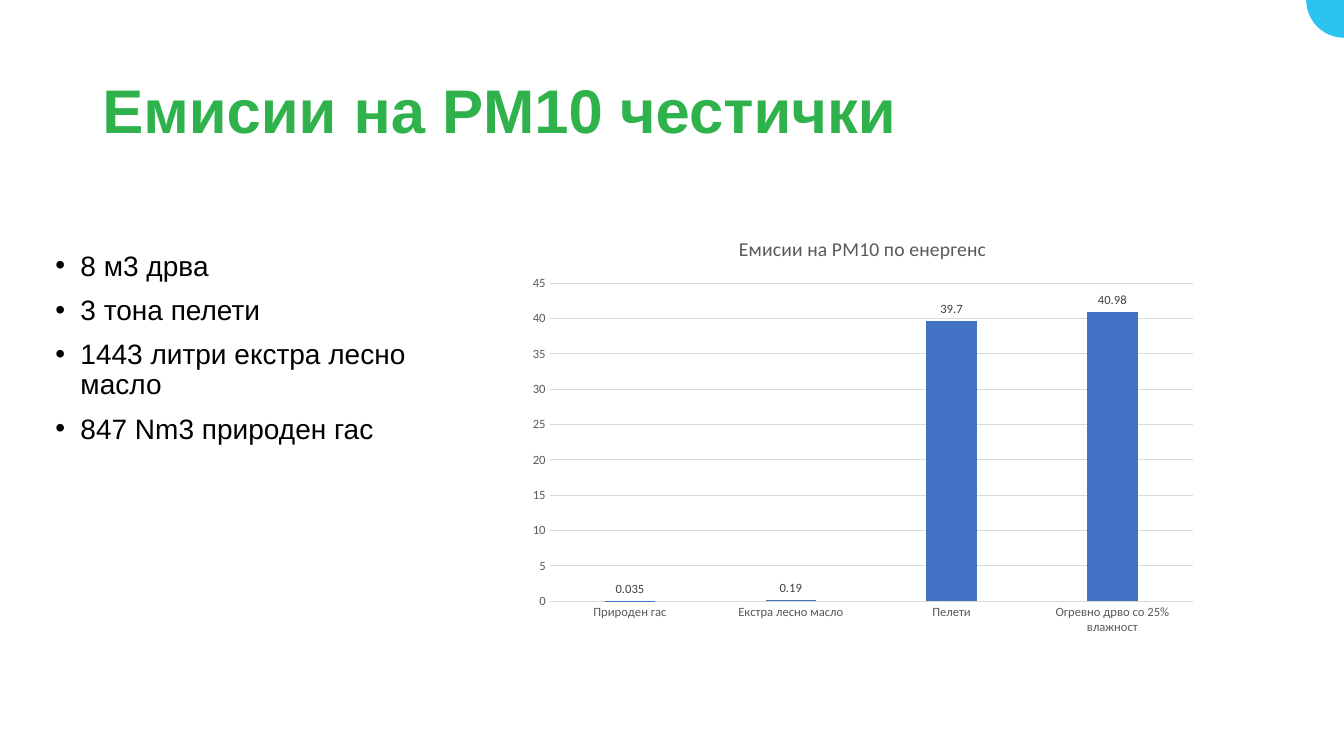
from pptx import Presentation
from pptx.chart.data import CategoryChartData
from pptx.dml.color import RGBColor
from pptx.enum.chart import XL_CHART_TYPE, XL_LABEL_POSITION, XL_TICK_MARK
from pptx.enum.shapes import MSO_SHAPE
from pptx.enum.text import MSO_ANCHOR
from pptx.oxml.ns import qn
from pptx.util import Pt
from lxml.etree import SubElement

BULLETS = ["8 м3 дрва", "3 тона пелети", "1443 литри екстра лесно масло", "847 Nm3 природен гас"]
EMISSIONS = {
    "Природен гас": 0.035,
    "Екстра лесно масло": 0.19,
    "Пелети": 39.7,
    "Огревно дрво со 25% влажност": 40.98,
}


def color(value):
    return RGBColor.from_string(value)


def apply(target, values):
    for name, value in values.items():
        setattr(target, name, value)


def style_font(font, text_color, **values):
    apply(font, values)
    font.color.rgb = color(text_color)


def style_line(line, line_color):
    line.width = Pt(0.75)
    line.color.rgb = color(line_color)


class SlideBuilder:
    heading = {"name": "Arial", "size": Pt(44), "bold": True, "text_color": "2FB24B"}
    body = {"name": "Arial", "size": Pt(20), "text_color": "000000"}
    chart_title = {"name": "Calibri", "size": Pt(14), "bold": False, "text_color": "595959"}
    axis_text = {"name": "Calibri", "size": Pt(9), "text_color": "595959"}
    label_text = {"name": "Calibri", "size": Pt(9), "text_color": "404040"}
    grid_color = "D9D9D9"
    bar_color = "4472C4"

    def __init__(self, slide):
        self.slide = slide

    def circle(self, left, top, diameter, fill):
        shape = self.slide.shapes.add_shape(
            MSO_SHAPE.OVAL, Pt(left), Pt(top), Pt(diameter), Pt(diameter))
        shape.shadow.inherit = False
        shape.fill.solid()
        shape.fill.fore_color.rgb = color(fill)
        shape.line.fill.background()

    def text(self, box, lines, font, anchor=MSO_ANCHOR.TOP, bullet=False):
        frame = self.slide.shapes.add_textbox(*map(Pt, box)).text_frame
        apply(frame, {"word_wrap": True, "vertical_anchor": anchor})
        frame.text = "\n".join(lines)
        for paragraph in frame.paragraphs:
            paragraph.line_spacing = 0.9
            style_font(paragraph.runs[0].font, **font)
            if bullet:
                paragraph.space_before = Pt(10)
                self.bullet(paragraph)

    def bullet(self, paragraph):
        properties = paragraph._p.get_or_add_pPr()
        properties.set("marL", str(Pt(18)))
        properties.set("indent", str(Pt(-18)))
        SubElement(properties, qn("a:buFont"), typeface="Arial")
        SubElement(properties, qn("a:buChar"), char="•")

    def column_chart(self, box, title, values):
        data = CategoryChartData()
        data.categories = list(values)
        data.add_series("Series 1", list(values.values()))
        chart = self.slide.shapes.add_chart(
            XL_CHART_TYPE.COLUMN_CLUSTERED, *map(Pt, box), data).chart
        apply(chart, {"has_legend": False, "has_title": True})
        style_font(chart.font, "000000", name="Calibri", size=Pt(10))
        title_frame = chart.chart_title.text_frame
        title_frame.text = title
        style_font(title_frame.paragraphs[0].runs[0].font, **self.chart_title)
        chart.chart_title.include_in_layout = False

        for axis in (chart.category_axis, chart.value_axis):
            apply(axis, {"major_tick_mark": XL_TICK_MARK.NONE,
                         "minor_tick_mark": XL_TICK_MARK.NONE})
            style_font(axis.tick_labels.font, **self.axis_text)
        style_line(chart.category_axis.format.line, self.grid_color)
        chart.value_axis.format.line.fill.background()
        style_line(chart.value_axis.major_gridlines.format.line, self.grid_color)
        apply(chart.value_axis, {"minimum_scale": 0, "maximum_scale": 45, "major_unit": 5})

        plot = chart.plots[0]
        apply(plot, {"gap_width": 219, "overlap": -27, "vary_by_categories": False})
        series = plot.series[0]
        series.format.fill.solid()
        series.format.fill.fore_color.rgb = color(self.bar_color)
        labels = series.data_labels
        apply(labels, {"show_value": True, "position": XL_LABEL_POSITION.OUTSIDE_END})
        style_font(labels.font, **self.label_text)


def main():
    presentation = Presentation()
    apply(presentation, {"slide_width": Pt(960), "slide_height": Pt(540)})
    builder = SlideBuilder(presentation.slides.add_slide(presentation.slide_layouts[6]))
    builder.circle(933, -27, 54, "2DC3EF")
    builder.text((66, 28.8, 828, 104.4), ["Емисии на PM10 честички"],
                 builder.heading, anchor=MSO_ANCHOR.MIDDLE)
    builder.text((32.4, 176.4, 327.6, 187.2), BULLETS, builder.body, bullet=True)
    builder.column_chart((370.8, 155.5, 491, 303.8), "Емисии на PM10 по енергенс", EMISSIONS)
    presentation.save("out.pptx")


if __name__ == "__main__":
    main()
